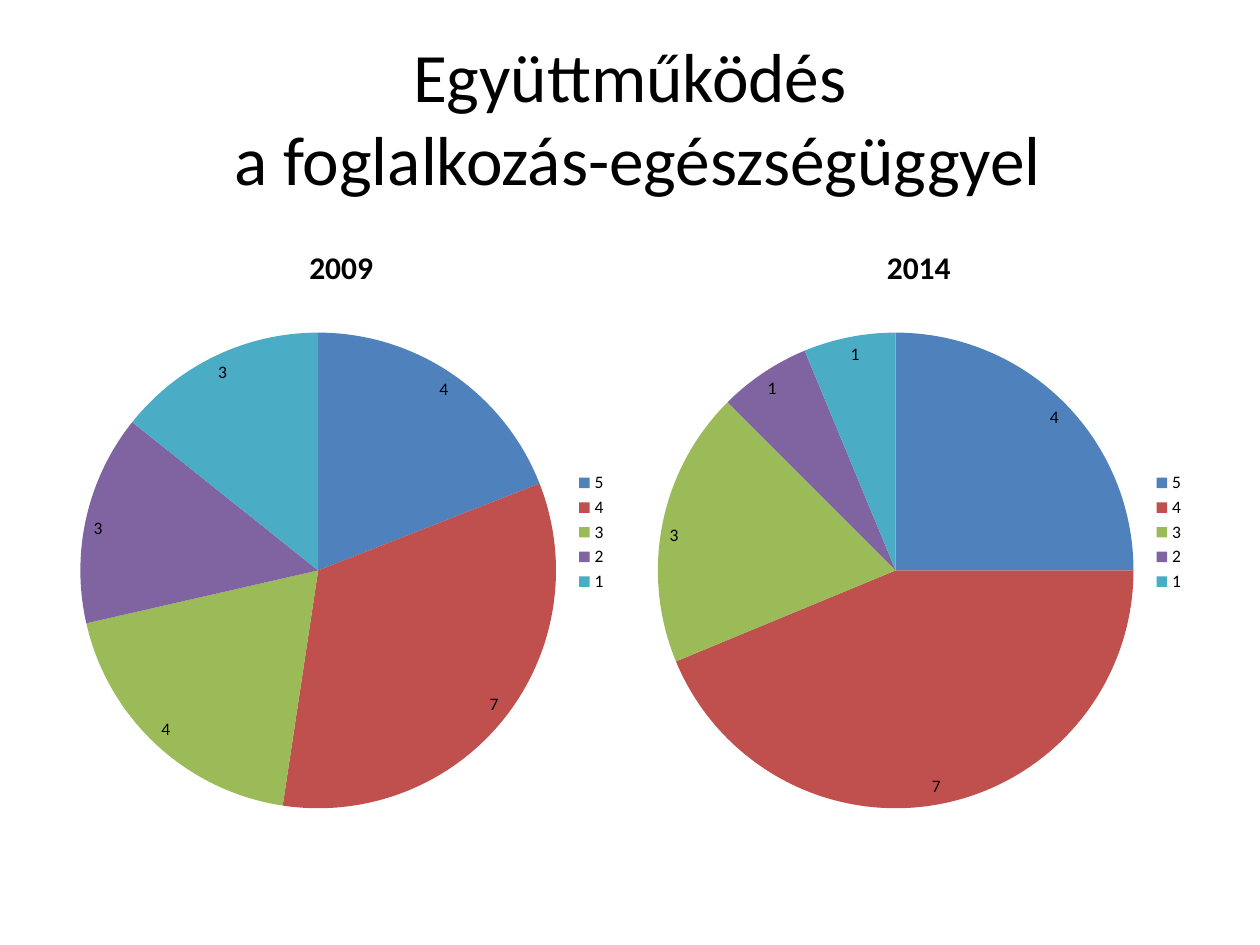
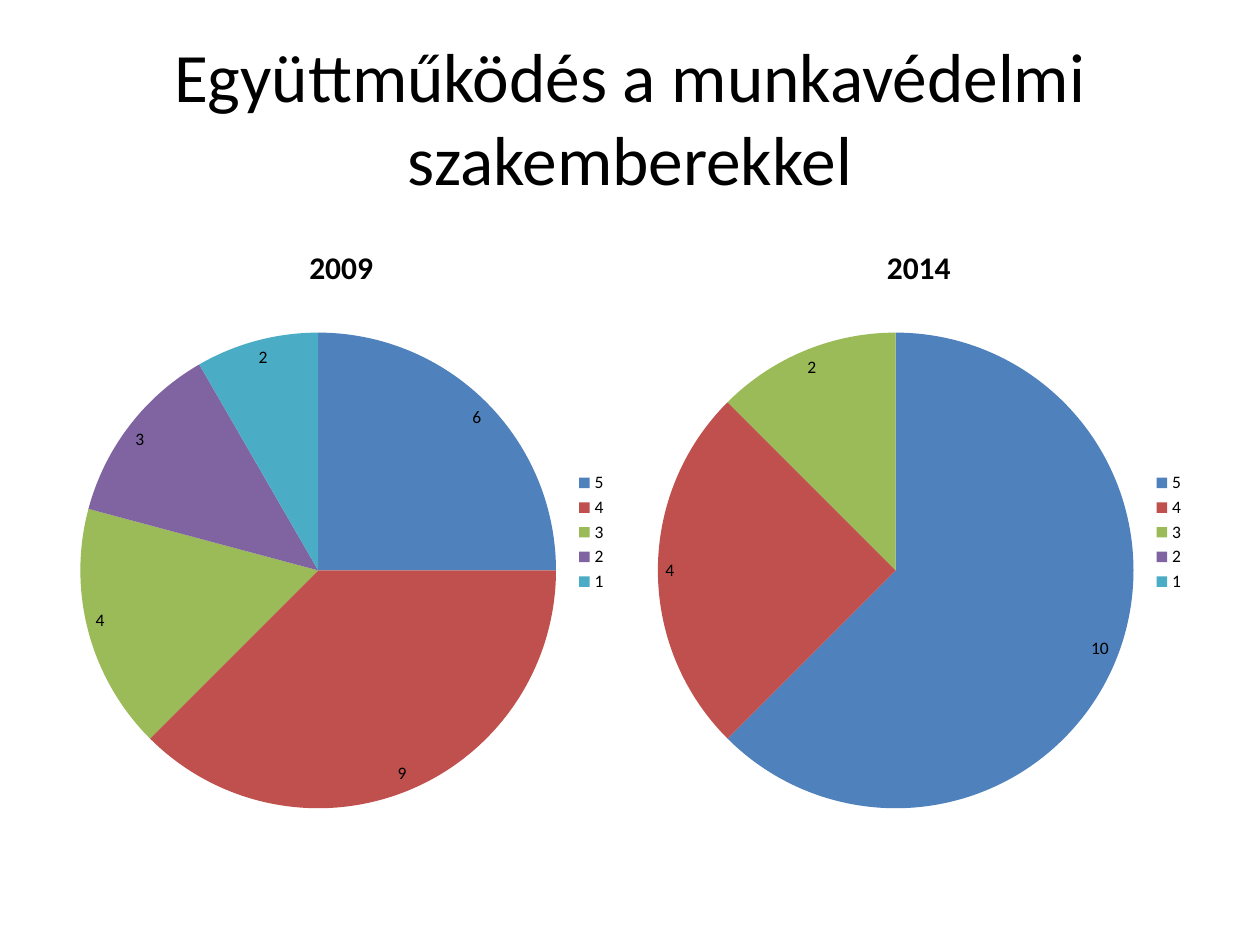
"""Build two slides that compare cooperation ratings of 2009 and 2014 in pie charts."""
from pptx import Presentation
from pptx.chart.data import CategoryChartData
from pptx.dml.color import RGBColor
from pptx.enum.chart import XL_CHART_TYPE as ChartType
from pptx.enum.chart import XL_LABEL_POSITION as LabelPosition
from pptx.enum.chart import XL_LEGEND_POSITION as LegendPosition
from pptx.enum.text import MSO_ANCHOR, PP_ALIGN
from pptx.util import Pt

BLACK = RGBColor(0x00, 0x00, 0x00)
BLUE = RGBColor(0x4F, 0x81, 0xBD)
RED = RGBColor(0xC0, 0x50, 0x4D)
GREEN = RGBColor(0x9B, 0xBB, 0x59)
PURPLE = RGBColor(0x80, 0x64, 0xA2)
TEAL = RGBColor(0x4B, 0xAC, 0xC6)

RATING_COLORS = {"5": BLUE, "4": RED, "3": GREEN, "2": PURPLE, "1": TEAL}
HEADING_FONT = {"name": "Calibri", "size": Pt(39.6), "bold": False}
CHART_FONT = {"name": "Calibri", "size": Pt(10)}
YEAR_FONT = {"name": "Calibri", "size": Pt(18), "bold": True}
LABEL_FORMAT = {
    "show_value": True,
    "show_percentage": False,
    "position": LabelPosition.INSIDE_END,
}
LEGEND_FORMAT = {"position": LegendPosition.RIGHT, "include_in_layout": False}

MARGIN = 36
CONTENT_WIDTH = 648
CHART_TOP, CHART_WIDTH, CHART_HEIGHT = 126, 318, 356.4
CHART_STEP = CONTENT_WIDTH - CHART_WIDTH

TOPICS = [
    (
        "Együttműködés\v a foglalkozás-egészségüggyel",
        {"2009": (4, 7, 4, 3, 3), "2014": (4, 7, 3, 1, 1)},
    ),
    (
        "Együttműködés a munkavédelmi szakemberekkel",
        {"2009": (6, 9, 4, 3, 2), "2014": (10, 4, 2, None, None)},
    ),
]


def apply_format(target, values):
    for attribute, value in values.items():
        setattr(target, attribute, value)


def apply_font(font, values):
    apply_format(font, values)
    font.color.rgb = BLACK


deck = Presentation()
deck.slide_width, deck.slide_height = Pt(720), Pt(540)

for topic, answers_by_year in TOPICS:
    slide = deck.slides.add_slide(deck.slide_layouts[6])
    heading = slide.shapes.add_textbox(
        Pt(MARGIN), Pt(21.6), Pt(CONTENT_WIDTH), Pt(90)
    ).text_frame
    apply_format(heading, {"word_wrap": True, "vertical_anchor": MSO_ANCHOR.MIDDLE})
    heading.text = topic
    heading.paragraphs[0].alignment = PP_ALIGN.CENTER
    for run in heading.paragraphs[0].runs:
        apply_font(run.font, HEADING_FONT)

    for column, (year, answers) in enumerate(answers_by_year.items()):
        ratings = CategoryChartData()
        ratings.categories = list(RATING_COLORS)
        ratings.add_series(year, answers)
        pie = slide.shapes.add_chart(
            ChartType.PIE,
            Pt(MARGIN + column * CHART_STEP),
            Pt(CHART_TOP),
            Pt(CHART_WIDTH),
            Pt(CHART_HEIGHT),
            ratings,
        ).chart
        apply_font(pie.font, CHART_FONT)

        pie.has_title = True
        pie.chart_title.text_frame.text = year
        apply_font(pie.chart_title.text_frame.paragraphs[0].runs[0].font, YEAR_FONT)

        pie.has_legend = True
        apply_format(pie.legend, LEGEND_FORMAT)
        apply_font(pie.legend.font, CHART_FONT)

        plot = pie.plots[0]
        apply_format(plot, {"vary_by_categories": True, "has_data_labels": True})
        apply_format(plot.data_labels, LABEL_FORMAT)
        apply_font(plot.data_labels.font, CHART_FONT)
        for index, color in enumerate(RATING_COLORS.values()):
            slice_fill = plot.series[0].points[index].format.fill
            slice_fill.solid()
            slice_fill.fore_color.rgb = color

deck.save("out.pptx")
